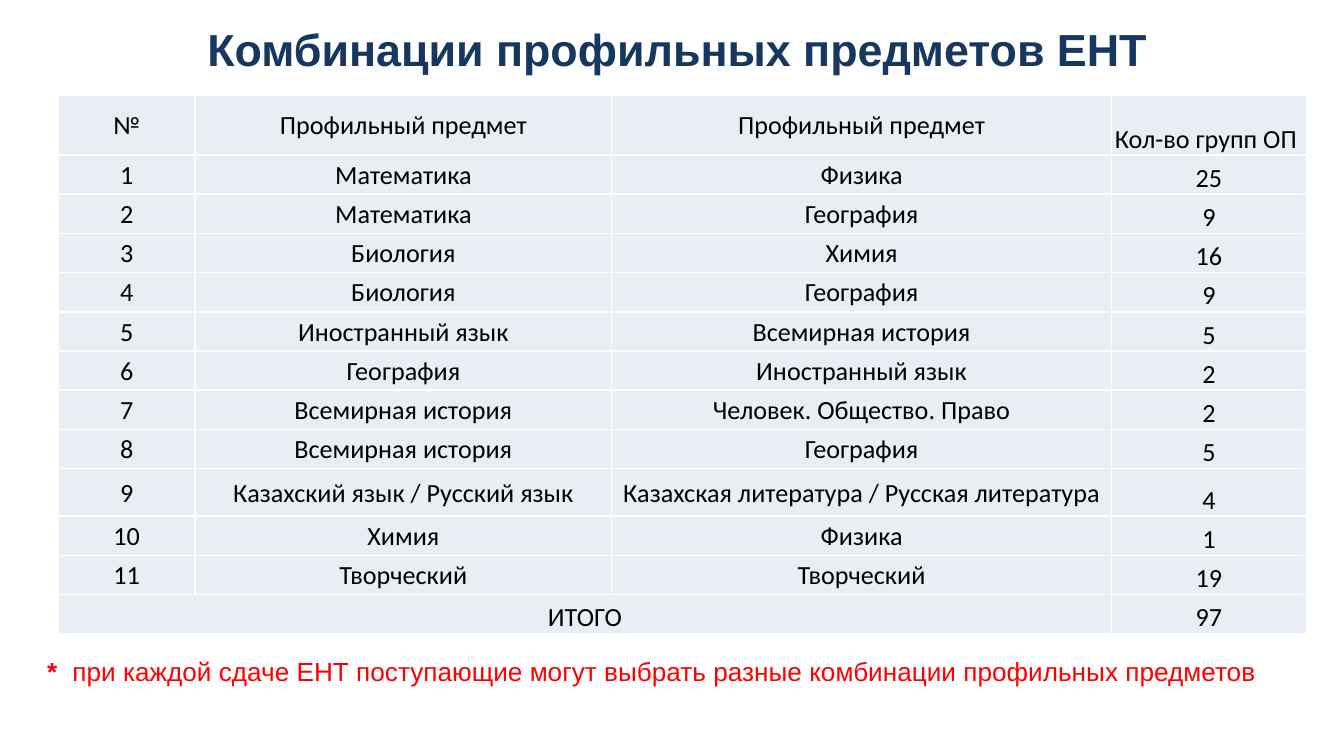
from dataclasses import dataclass

from pptx import Presentation
from pptx.dml.color import RGBColor
from pptx.enum.text import MSO_ANCHOR, MSO_AUTO_SIZE, PP_ALIGN
from pptx.util import Cm, Pt


@dataclass(frozen=True)
class Theme:
    paper: RGBColor = RGBColor(0xFF, 0xFF, 0xFF)
    cell: RGBColor = RGBColor(0xE9, 0xED, 0xF4)
    ink: RGBColor = RGBColor(0x00, 0x00, 0x00)
    heading: RGBColor = RGBColor(0x17, 0x37, 0x5E)
    warning: RGBColor = RGBColor(0xFF, 0x00, 0x00)
    heading_size: Pt = Pt(24)
    text_size: Pt = Pt(14)
    heading_font: str = "Arial"
    table_font: str = "Calibri"


THEME = Theme()

HEADER = ("№", "Профильный предмет", "Профильный предмет", "Кол-во групп ОП ")
COMBINATIONS = (
    ("Математика", "Физика", 25),
    ("Математика", "География", 9),
    ("Биология", "Химия", 16),
    ("Биология", "География", 9),
    ("Иностранный язык", "Всемирная история", 5),
    ("География", "Иностранный язык", 2),
    ("Всемирная история", "Человек. Общество. Право", 2),
    ("Всемирная история", "География", 5),
    ("Казахский язык / Русский язык", "Казахская литература / Русская литература", 4),
    ("Химия", "Физика", 1),
    ("Творческий", "Творческий", 19),
)
COLUMN_WIDTHS = (2.59, 7.87, 9.45, 3.68)
ROW_HEIGHT, HEADER_HEIGHT = 0.74, 1.13
TALL_ROWS = {9: 0.9}

BAND_FORMAT = {
    "margin_left": Cm(0.18), "margin_right": Cm(0.18),
    "margin_top": Cm(0.1), "margin_bottom": Cm(0.1),
    "vertical_anchor": MSO_ANCHOR.MIDDLE,
    "word_wrap": True, "auto_size": MSO_AUTO_SIZE.NONE,
}
CELL_FORMAT = {
    "margin_left": Cm(0.03), "margin_right": Cm(0.03),
    "margin_top": Cm(0.03), "margin_bottom": 0,
}


def apply(target, values):
    for attribute, value in values.items():
        setattr(target, attribute, value)


def add_run(paragraph, text, name, size, color, bold=False):
    run = paragraph.add_run()
    run.text = text
    apply(run.font, {"name": name, "size": size, "bold": bold})
    run.font.color.rgb = color


def format_band(band, box):
    """Place a white strip of text and return its first paragraph."""
    apply(band, dict(zip(("left", "top", "width", "height"), box)))
    band.fill.solid()
    band.fill.fore_color.rgb = THEME.paper
    apply(band.text_frame, BAND_FORMAT)
    return band.text_frame.paragraphs[0]


def place_heading(slide, box):
    line = format_band(slide.shapes.title, box)
    line.alignment = PP_ALIGN.CENTER
    add_run(line, "Комбинации профильных предметов ЕНТ ", THEME.heading_font,
            THEME.heading_size, THEME.heading, bold=True)


def fill_cell(cell, text, anchor):
    apply(cell, CELL_FORMAT)
    cell.vertical_anchor = anchor
    cell.fill.solid()
    cell.fill.fore_color.rgb = THEME.cell
    line = cell.text_frame.paragraphs[0]
    line.alignment = PP_ALIGN.CENTER
    add_run(line, text, THEME.table_font, THEME.text_size, THEME.ink)


def place_combinations(slide, box):
    numbered = [(number, *row) for number, row in enumerate(COMBINATIONS, 1)]
    rows = [HEADER, *numbered]
    total_row, count_column = len(rows), len(HEADER) - 1
    table = slide.shapes.add_table(total_row + 1, len(HEADER), *box).table
    apply(table, {"first_row": False, "horz_banding": False})

    for column, width in zip(table.columns, COLUMN_WIDTHS):
        column.width = Cm(width)
    heights = {0: HEADER_HEIGHT, **TALL_ROWS}
    for index, row in enumerate(table.rows):
        row.height = Cm(heights.get(index, ROW_HEIGHT))

    for r, values in enumerate(rows):
        for c, value in enumerate(values):
            anchor = MSO_ANCHOR.BOTTOM if c == count_column else MSO_ANCHOR.MIDDLE
            fill_cell(table.cell(r, c), str(value), anchor)

    total_label = table.cell(total_row, 0)
    total_label.merge(table.cell(total_row, count_column - 1))
    fill_cell(total_label, "ИТОГО", MSO_ANCHOR.BOTTOM)
    total = sum(count for *_, count in COMBINATIONS)
    fill_cell(table.cell(total_row, count_column), str(total), MSO_ANCHOR.BOTTOM)


def place_footnote(slide, box):
    line = format_band(slide.shapes.add_textbox(*box), box)
    line.alignment = PP_ALIGN.JUSTIFY
    hanging = Cm(0.48)
    properties = line._p.get_or_add_pPr()
    properties.set("marL", str(hanging))
    properties.set("indent", str(-hanging))
    style = (THEME.heading_font, THEME.text_size, THEME.warning)
    add_run(line, "*\t", *style, bold=True)
    add_run(line, "при каждой сдаче ЕНТ поступающие могут выбрать разные "
                  "комбинации профильных предметов ", *style)


def main():
    deck = Presentation()
    apply(deck, {"slide_width": Cm(25.4), "slide_height": Cm(14.28)})
    title_only = deck.slide_layouts[5]
    slide = deck.slides.add_slide(title_only)
    place_heading(slide, (Cm(2.31), Cm(0.25), Cm(21.21), Cm(1.35)))
    place_combinations(slide, (Cm(1.1), Cm(1.8), Cm(23.59), Cm(10.17)))
    place_footnote(slide, (Cm(0.71), Cm(12.01), Cm(24.21), Cm(1.35)))
    deck.save("out.pptx")


if __name__ == "__main__":
    main()
